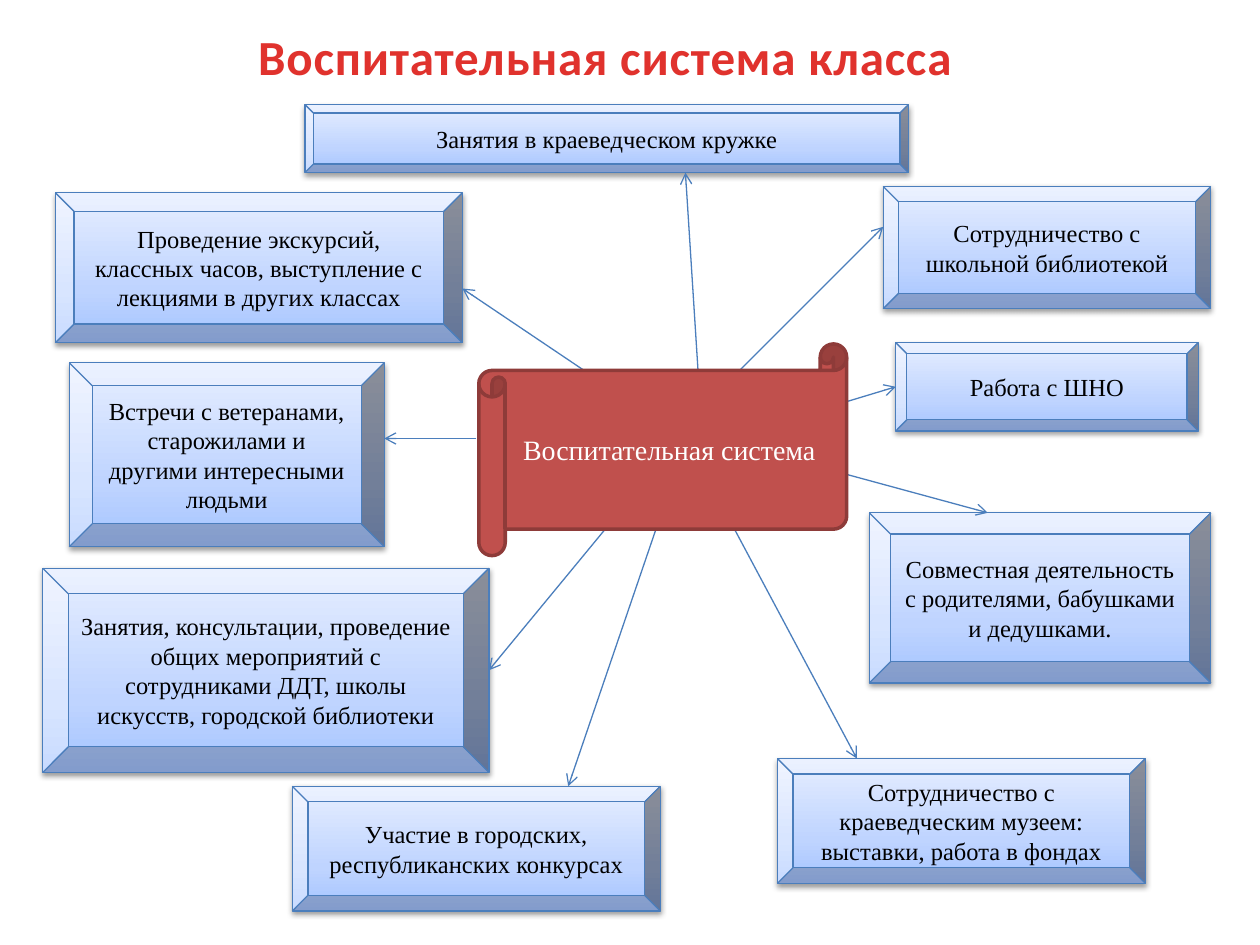
from lxml import etree
from pptx import Presentation
from pptx.dml.color import RGBColor
from pptx.enum import shapes, text
from pptx.oxml import parse_xml
from pptx.oxml.ns import qn
from pptx.util import Inches, Pt

BLUE = RGBColor(0x4B, 0x7E, 0xBC)
RED = RGBColor(0xC0, 0x50, 0x4D)
DARK = RGBColor(0x8E, 0x3B, 0x39)
BLACK = RGBColor(0, 0, 0)
WHITE = RGBColor(0xFF, 0xFF, 0xFF)
SHEEN = [(0, RGBColor(0xA4, 0xC4, 0xFF)), (35, RGBColor(0xBF, 0xD4, 0xFF)),
         (100, RGBColor(0xE6, 0xEE, 0xFF))]
FLAME = [(25, RGBColor(0xE0, 0x32, 0x2D)), (100, RGBColor(0xA2, 0x20, 0x1C))]
NS = 'xmlns:a="http://schemas.openxmlformats.org/drawingml/2006/main"'
SHADE = (f'<a:effectLst {NS}><a:outerShdw blurRad="40000" dist="20000" dir="5400000" '
         'rotWithShape="0"><a:srgbClr val="000000"><a:alpha val="38000"/>'
         '</a:srgbClr></a:outerShdw></a:effectLst>')

# Box and wording of each activity
CARDS = [
    ((0.44, 1.53, 3.23, 1.19),
     "Проведение экскурсий, классных часов, выступление с лекциями в других классах"),
    ((7.01, 1.48, 2.6, 0.97), "Сотрудничество с школьной библиотекой"),
    ((7.11, 2.72, 2.4, 0.7), "Работа с ШНО"),
    ((0.55, 2.88, 2.5, 1.46),
     "Встречи с ветеранами, старожилами и другими интересными людьми"),
    ((2.42, 0.83, 4.79, 0.54), "Занятия в краеведческом кружке"),
    ((6.9, 4.07, 2.71, 1.35),
     "Совместная деятельность с родителями, бабушками и дедушками."),
    ((0.34, 4.51, 3.54, 1.62),
     "Занятия, консультации, проведение общих мероприятий с сотрудниками ДДТ, "
     "школы искусств, городской библиотеки"),
    ((2.32, 6.24, 2.92, 0.99), "Участие в городских, республиканских конкурсах"),
    ((6.17, 6.02, 2.92, 0.99),
     "Сотрудничество с краеведческим музеем: выставки, работа в фондах"),
]
# Start and end of each arrow
RAYS = [
    (5.55, 3.1, 5.44, 1.37), (4.71, 2.99, 3.67, 2.29), (5.76, 3.05, 7.01, 1.8),
    (3.78, 3.48, 3.05, 3.48), (4.82, 4.18, 3.88, 5.32), (5.23, 4.13, 4.51, 6.24),
    (5.76, 4.07, 6.8, 6.02), (6.48, 3.7, 7.84, 4.07), (6.48, 3.26, 7.11, 3.07),
]


def blend(stops, angle):
    marks = "".join(f'<a:gs pos="{pos * 1000}"><a:srgbClr val="{tint}"/></a:gs>'
                    for pos, tint in stops)
    return parse_xml(f'<a:gradFill {NS} rotWithShape="1"><a:gsLst>{marks}</a:gsLst>'
                     f'<a:lin ang="{angle * 60000}" scaled="0"/></a:gradFill>')


def panel(slide, kind, box, words, size, ink):
    shape = slide.shapes.add_shape(kind, *map(Inches, box))
    frame = shape.text_frame
    frame.word_wrap = True
    frame.vertical_anchor = text.MSO_ANCHOR.MIDDLE
    frame.text = words
    para = frame.paragraphs[0]
    para.alignment = text.PP_ALIGN.CENTER
    font = para.runs[0].font
    font.name, font.size = "Times New Roman", Pt(size)
    font.color.rgb = ink
    return shape


def card(slide, box, words):
    shape = panel(slide, shapes.MSO_SHAPE.BEVEL, box, words, 14, BLACK)
    props = shape.element.spPr
    props.append(blend(SHEEN, 270))
    shape.line.color.rgb = BLUE
    shape.line.width = Pt(0.75)
    props.append(parse_xml(SHADE))


def arrow(slide, ends):
    line = slide.shapes.add_connector(shapes.MSO_CONNECTOR.STRAIGHT, *map(Inches, ends))
    line.line.color.rgb = BLUE
    line.line.width = Pt(0.75)
    props = line.element.spPr
    etree.SubElement(props.find(qn("a:ln")), qn("a:tailEnd"), type="arrow")
    etree.SubElement(props, qn("a:effectLst"))


def hub(slide, box):
    shape = panel(slide, shapes.MSO_SHAPE.HORIZONTAL_SCROLL, box,
                  "Воспитательная система", 16, WHITE)
    shape.shadow.inherit = False
    shape.fill.solid()
    shape.fill.fore_color.rgb = RED
    shape.line.color.rgb = DARK
    shape.line.width = Pt(2)


def title(slide, box):
    frame = slide.shapes.add_textbox(*map(Inches, box)).text_frame
    frame.word_wrap = False
    frame.auto_size = text.MSO_AUTO_SIZE.SHAPE_TO_FIT_TEXT
    frame.text = "Воспитательная система класса"
    run = frame.paragraphs[0].runs[0]
    run.font.name, run.font.size, run.font.bold = "Calibri", Pt(28), True
    props = run.font._element if hasattr(run.font, "_element") else run._r.get_or_add_rPr()
    props.set("spc", "50")
    props.insert(0, blend(FLAME, 90))


def main():
    deck = Presentation()
    deck.slide_width, deck.slide_height = Inches(10), Inches(7.5)
    slide = deck.slides.add_slide(deck.slide_layouts[6])
    # Activities around the hub
    for box, words in CARDS:
        card(slide, box, words)
    # Arrows run under the scroll
    for ends in RAYS:
        arrow(slide, ends)
    hub(slide, (3.8, 2.73, 2.92, 1.68))
    title(slide, (1.95, 0.16, 5.79, 0.57))
    deck.save("out.pptx")


if __name__ == "__main__":
    main()
